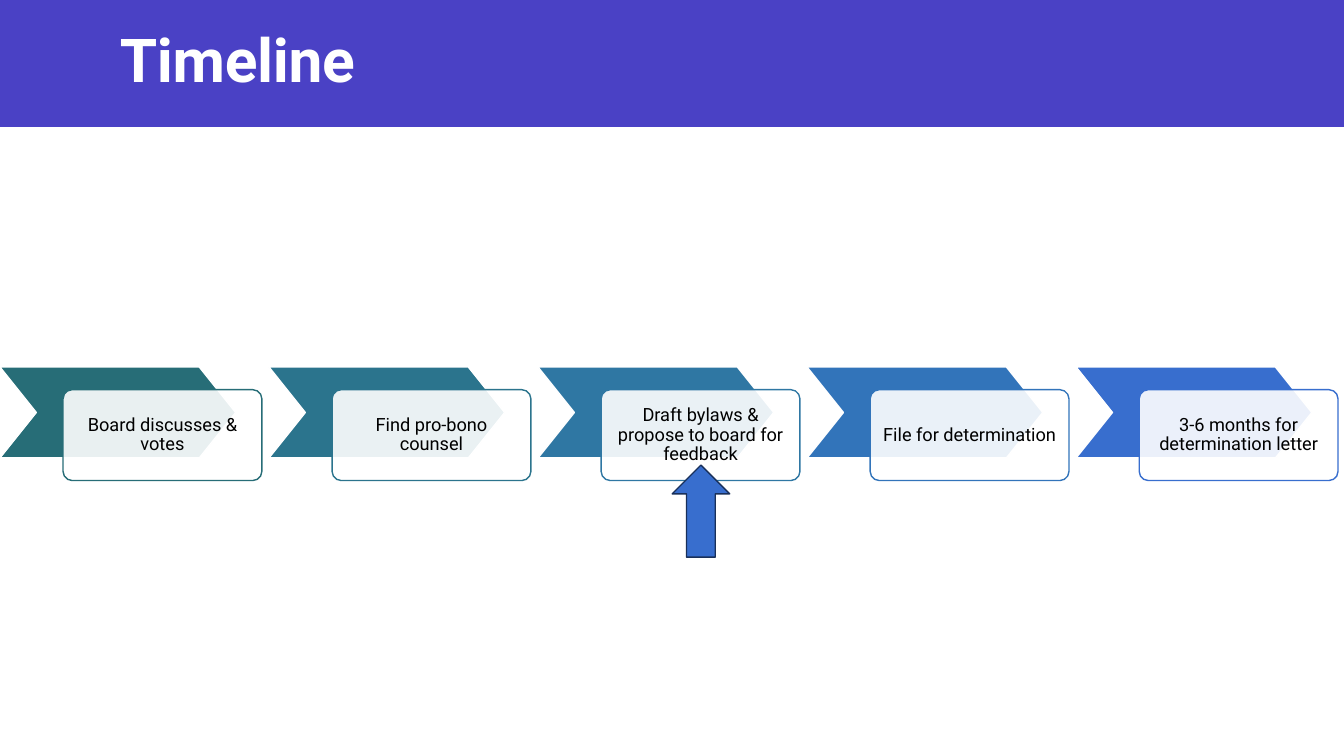
from dataclasses import dataclass
from lxml.etree import SubElement
from pptx import Presentation
from pptx.dml.color import RGBColor
from pptx.enum.shapes import MSO_SHAPE
from pptx.enum.text import MSO_ANCHOR, PP_ALIGN
from pptx.oxml.ns import qn
from pptx.util import Cm, Pt


@dataclass(frozen=True)
class Theme:
    font: str = "Roboto"
    banner: str = "4A41C5"
    white: str = "FFFFFF"
    ink: str = "000000"
    arrow: str = "386ECE"
    edge: str = "19305A"
    steps: tuple = ("276D77", "2B748D", "2F77A3", "3274BA", "386ECE")
    title: float = 43.2
    body: float = 13


def write(frame, text, *, font, size, color, bold=False, align=PP_ALIGN.LEFT,
          leading=1.0, track=0, inset=0.25):
    """Put one formatted paragraph in a text frame, centred vertically."""
    frame.word_wrap = True
    frame.vertical_anchor = MSO_ANCHOR.MIDDLE
    frame.margin_left = frame.margin_right = Cm(inset)
    frame.margin_top = frame.margin_bottom = Cm(inset)
    para = frame.paragraphs[0]
    para.alignment = align
    para.line_spacing = leading
    run = para.add_run()
    run.text = text
    run.font.name = font
    run.font.size = Pt(size)
    run.font.bold = bold
    run.font.color.rgb = RGBColor.from_string(color)
    if track:
        run.font._element.set("spc", str(track))


class Deck:
    def __init__(self, theme):
        self.theme = theme
        self.prs = Presentation()
        self.prs.slide_width, self.prs.slide_height = Cm(33.87), Cm(19.05)
        self.slide = self.prs.slides.add_slide(self.prs.slide_layouts[6])

    def shape(self, kind, box, fill, line=None, adjust=None, alpha=None):
        shape = self.slide.shapes.add_shape(kind, *map(Cm, box))
        shape.shadow.inherit = False
        shape.fill.solid()
        shape.fill.fore_color.rgb = RGBColor.from_string(fill)
        if alpha is not None:
            color = shape._element.spPr.find(qn("a:solidFill"))[0]
            SubElement(color, qn("a:alpha")).set("val", str(alpha * 1000))
        if line:
            shape.line.color.rgb = RGBColor.from_string(line)
            shape.line.width = Pt(1)
        else:
            shape.line.fill.background()
        if adjust is not None:
            shape.adjustments[0] = adjust
        return shape

    def banner(self, text):
        look = self.theme
        self.shape(MSO_SHAPE.RECTANGLE, (0, 0, 33.87, 3.2), look.banner)
        box = self.slide.shapes.add_textbox(*map(Cm, (2.77, 0.53, 27.8, 2.1)))
        write(box.text_frame, text, font=look.font, size=look.title,
              color=look.white, bold=True, leading=0.9, track=-20)

    def step(self, left, text, color):
        look = self.theme
        self.shape(MSO_SHAPE.CHEVRON, (left, 9.25, 5.94, 2.29), color,
                   line=look.white, adjust=0.4)
        card = self.shape(MSO_SHAPE.ROUNDED_RECTANGLE,
                          (left + 1.59, 9.82, 5.01, 2.29), look.white,
                          line=color, adjust=0.1, alpha=90)
        write(card.text_frame, text, font=look.font, size=look.body,
              color=look.ink, align=PP_ALIGN.CENTER, leading=0.9)

    def marker(self, left, top):
        self.shape(MSO_SHAPE.UP_ARROW, (left, top, 1.45, 2.32),
                   self.theme.arrow, line=self.theme.edge)

    def save(self):
        self.prs.save("out.pptx")


STEPS = (
    "Board discusses & votes",
    "Find pro-bono counsel",
    "Draft bylaws & propose to board for feedback",
    "File for determination",
    "3-6 months for determination letter",
)
PITCH = 6.78


def main():
    deck = Deck(Theme())
    # Title band
    deck.banner("Timeline")
    # Process steps, left to right
    for i, (text, color) in enumerate(zip(STEPS, deck.theme.steps)):
        deck.step(i * PITCH, text, color)
    # Arrow at the current step
    deck.marker(16.94, 11.72)
    deck.save()


if __name__ == "__main__":
    main()
